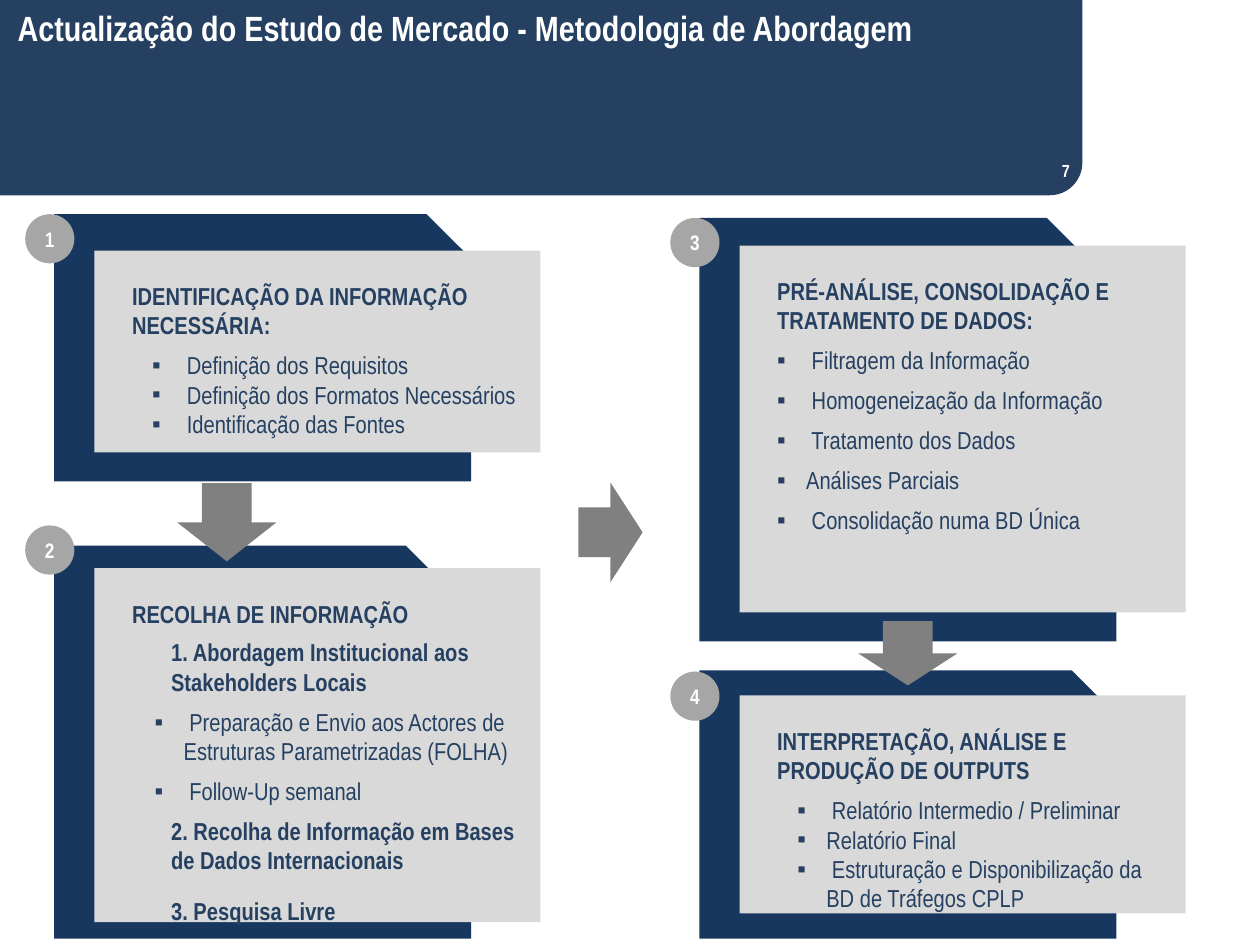
"""Build the market study methodology slide: four numbered steps joined by arrows."""
from dataclasses import dataclass

from lxml import etree
from pptx import Presentation, util as u
from pptx.dml.color import RGBColor
from pptx.enum import shapes, text
from pptx.oxml.ns import qn


@dataclass(frozen=True)
class Theme:
    font: str = "Arial Narrow"
    navy: str = "254061"
    frame: str = "17375E"
    card: str = "D9D9D9"
    dot: str = "A6A6A6"
    arrow: str = "808080"
    white: str = "FFFFFF"
    title: int = 20
    body: int = 14
    label: int = 12
    page: int = 10


T = Theme()
KIND = shapes.MSO_SHAPE
ALIGN = text.PP_ALIGN
MID = text.MSO_ANCHOR.MIDDLE
TITLE = "Actualização do Estudo de Mercado - Metodologia de Abordagem"
COLS = (0.43, 5.55)
WIDE, CARD, DOT = 3.31, 3.54, 0.39
SHIFT, HANG = 0.32, 0.23

STEPS = [
    dict(col=0, frame=(1.7, 2.12), card=(1.99, 1.6), dot=1.7, left=0.59, after=0,
         head="IDENTIFICAÇÃO DA INFORMAÇÃO NECESSÁRIA:",
         items=[" Definição dos Requisitos", " Definição dos Formatos Necessários",
                " Identificação das Fontes"]),
    dict(col=0, frame=(4.33, 3.12), card=(4.51, 2.81), dot=4.17, left=0, after=0,
         head="RECOLHA DE INFORMAÇÃO", items=[]),
    dict(col=1, frame=(1.73, 3.36), card=(1.95, 2.91), dot=1.73, left=0.43, after=6,
         head="PRÉ-ANÁLISE, CONSOLIDAÇÃO E TRATAMENTO DE DADOS:",
         items=[" Filtragem da Informação", " Homogeneização da Informação",
                " Tratamento dos Dados", "Análises Parciais",
                " Consolidação numa BD Única"]),
    dict(col=1, frame=(5.32, 2.13), card=(5.52, 1.73), dot=5.33, left=0.59, after=0,
         head="INTERPRETAÇÃO, ANÁLISE E PRODUÇÃO DE OUTPUTS",
         items=[" Relatório Intermedio / Preliminar", "Relatório Final",
                " Estruturação e Disponibilização da BD de Tráfegos CPLP"]),
]
DETAIL = [
    ("1. Abordagem Institucional aos Stakeholders Locais", False, 6),
    (" Preparação e Envio aos Actores de Estruturas Parametrizadas (FOLHA)", True, 6),
    (" Follow-Up semanal", True, 6),
    ("2. Recolha de Informação em Bases de Dados Internacionais", False, 12),
    ("3. Pesquisa Livre", False, 0),
]
ARROWS = [((4.59, 3.83, 0.51, 0.79), 0), ((1.49, 3.75, 0.62, 0.79), 90),
          ((6.95, 4.79, 0.51, 0.79), 90)]


def inches(box):
    return [u.Inches(v) for v in box]


def draw(slide, kind, box, fill):
    shape = slide.shapes.add_shape(kind, *inches(box))
    shape.shadow.inherit = False
    shape.fill.solid()
    shape.fill.fore_color.rgb = RGBColor.from_string(fill)
    shape.line.fill.background()
    return shape


def write(para, words, size, color, bold=True, align=ALIGN.LEFT,
          left=0, after=0, bullet=False):
    props = para._p.get_or_add_pPr()
    props.set("marL", str(u.Inches(left)))
    props.set("indent", str(u.Inches(-HANG if bullet else 0)))
    if bullet:
        etree.SubElement(props, qn("a:buFont")).set("typeface", "Arial")
        etree.SubElement(props, qn("a:buChar")).set("char", "▪")
    para.text = words
    para.alignment = align
    para.space_before, para.space_after = u.Pt(0), u.Pt(after)
    font = para.font
    font.name, font.size, font.bold = T.font, u.Pt(size), bold
    font.color.rgb = RGBColor.from_string(color)


def fill_in(frame, rows):
    """Write rows of (words, is bullet, left indent, space after)."""
    frame.word_wrap = True
    frame.vertical_anchor = text.MSO_ANCHOR.TOP
    for i, (words, bullet, left, after) in enumerate(rows):
        para = frame.add_paragraph() if i else frame.paragraphs[0]
        write(para, words, T.body, T.navy, not bullet,
              left=left, after=after, bullet=bullet)


def banner(slide):
    draw(slide, KIND.ROUND_2_DIAG_RECTANGLE, (0, 0, 8.59, 1.55), T.navy)
    draw(slide, KIND.RECTANGLE, (0, 0, 7.64, 0.9), T.navy)
    page = slide.shapes.add_textbox(*inches((6.26, 1.15, 2.33, 0.4))).text_frame
    page.word_wrap, page.vertical_anchor = True, MID
    write(page.paragraphs[0], "7", T.page, T.white, align=ALIGN.RIGHT)
    title = slide.shapes.title
    title.left, title.top, title.width, title.height = inches((-0.12, 0, 7.6, 0.84))
    frame = title.text_frame
    frame.auto_size = text.MSO_AUTO_SIZE.NONE
    frame.vertical_anchor = text.MSO_ANCHOR.TOP
    write(frame.paragraphs[0], TITLE, T.title, T.white, left=0.16)
    slide.shapes._spTree.append(title._element)


def step(slide, num, data):
    x = COLS[data["col"]]
    top, high = data["frame"]
    draw(slide, KIND.SNIP_1_RECTANGLE, (x, top, WIDE, high), T.frame)
    top, high = data["card"]
    card = draw(slide, KIND.RECTANGLE, (x + SHIFT, top, CARD, high), T.card)
    card.text_frame.margin_top = u.Inches(0.24)
    fill_in(card.text_frame, [(data["head"], False, 0.2, 6)] + [
        (item, True, data["left"], data["after"]) for item in data["items"]])
    dot = draw(slide, KIND.OVAL, (x - HANG, data["dot"], DOT, DOT), T.dot)
    frame = dot.text_frame
    frame.margin_left = frame.margin_right = 0
    frame.vertical_anchor = MID
    write(frame.paragraphs[0], str(num), T.label, T.white, align=ALIGN.CENTER)


def main():
    deck = Presentation()
    deck.slide_width, deck.slide_height = inches((10, 7.5))
    slide = deck.slides.add_slide(deck.slide_layouts[5])
    banner(slide)
    for num, data in enumerate(STEPS, 1):
        step(slide, num, data)
    box = slide.shapes.add_textbox(*inches((1.06, 5.01, 3.23, 2.49)))
    fill_in(box.text_frame, [(words, bullet, 0.3 if bullet else 0.2, after)
                             for words, bullet, after in DETAIL])
    for place, turn in ARROWS:
        draw(slide, KIND.RIGHT_ARROW, place, T.arrow).rotation = turn
    deck.save("out.pptx")


if __name__ == "__main__":
    main()
